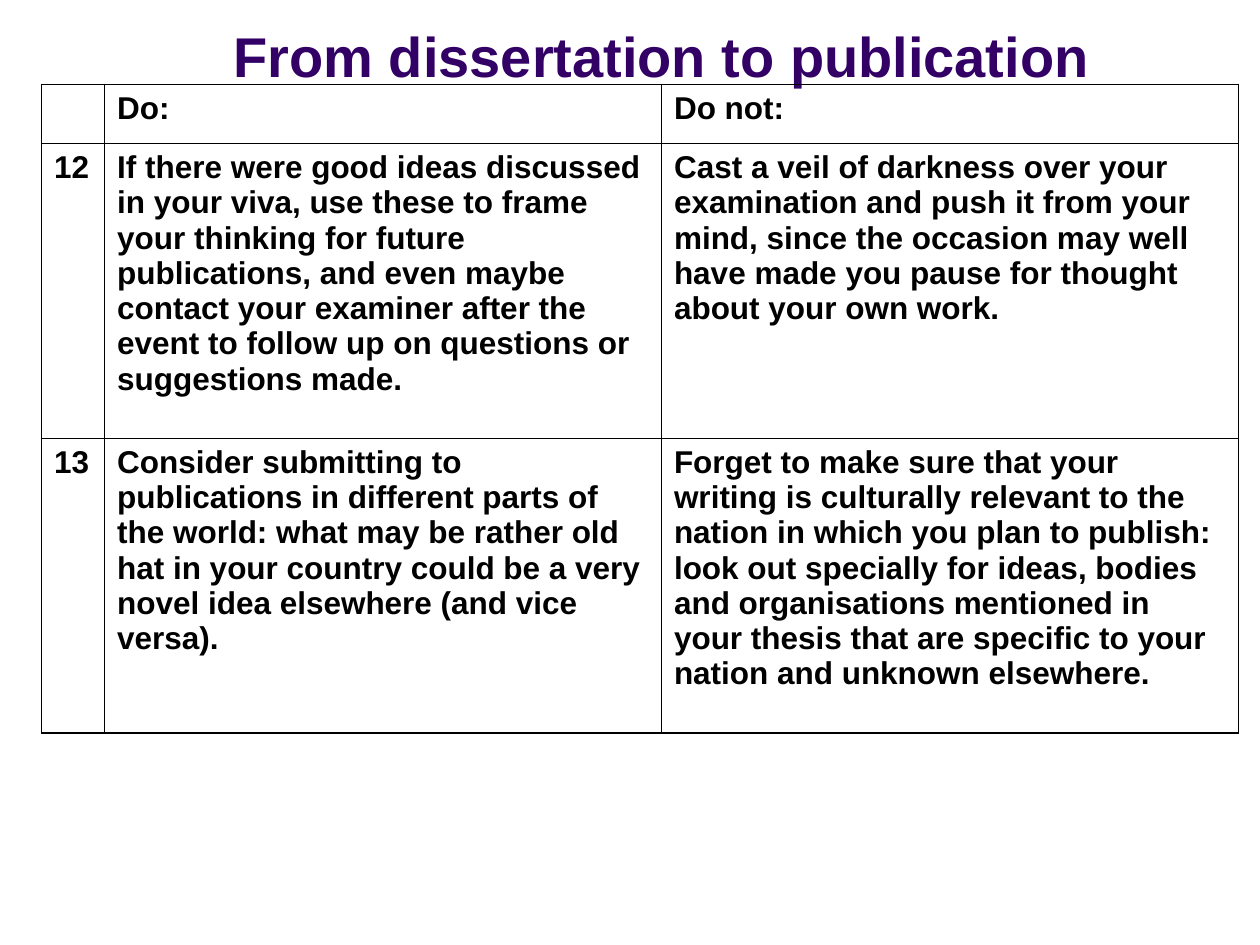
import lxml.etree
import pptx
import pptx.dml.color
import pptx.enum.text
import pptx.oxml.ns
import pptx.util

FONT = "Arial"
COLOURS = {"title": "330066", "text": "000000", "border": "000000"}
COLUMN_WIDTHS = [0.5, 4.42, 4.58]
ROW_HEIGHTS = [0.47, 2.34, 2.34]
ADVICE = [
    ["", "Do:", "Do not:"],
    [
        "12",
        "If there were good ideas discussed in your viva, use these to frame your "
        "thinking for future publications, and even maybe contact your examiner "
        "after the event to follow up on questions or suggestions made.",
        "Cast a veil of darkness over your examination and push it from your mind, "
        "since the occasion may well have made you pause for thought about your "
        "own work.",
    ],
    [
        "13",
        "Consider submitting to publications in different parts of the world: what "
        "may be rather old hat in your country could be a very novel idea elsewhere "
        "(and vice versa).",
        "Forget to make sure that your writing is culturally relevant to the nation "
        "in which you plan to publish: look out specially for ideas, bodies and "
        "organisations mentioned in your thesis that are specific to your nation "
        "and unknown elsewhere.",
    ],
]


def inches(*lengths):
    return [pptx.util.Inches(length) for length in lengths]


def write_bold(frame, text, size, colour):
    frame.text = text
    font = frame.paragraphs[0].font
    for span in frame.paragraphs[0].runs:
        font = span.font
    font.name = FONT
    font.size = pptx.util.Pt(size)
    font.bold = True
    font.color.rgb = pptx.dml.color.RGBColor.from_string(COLOURS[colour])


def add_title(page, text):
    box = page.shapes.add_textbox(*inches(0.5, 0.17, 8.25, 0.58))
    frame = box.text_frame
    frame.word_wrap = True
    frame.vertical_anchor = pptx.enum.text.MSO_ANCHOR.BOTTOM
    write_bold(frame, text, 32, "title")
    frame.paragraphs[0].alignment = pptx.enum.text.PP_ALIGN.RIGHT


def set_borders(cell, points):
    """Outline all four sides; borders must precede the fill in the cell's XML."""
    properties = cell._tc.get_or_add_tcPr()
    qualified = pptx.oxml.ns.qn
    for index, side in enumerate(("a:lnL", "a:lnR", "a:lnT", "a:lnB")):
        line = lxml.etree.Element(qualified(side), w=str(pptx.util.Pt(points)))
        fill = lxml.etree.SubElement(line, qualified("a:solidFill"))
        lxml.etree.SubElement(fill, qualified("a:srgbClr"), val=COLOURS["border"])
        properties.insert(index, line)


def add_advice_table(page, rows):
    frame = page.shapes.add_table(
        len(rows), len(COLUMN_WIDTHS),
        *inches(0.33, 0.67, sum(COLUMN_WIDTHS), sum(ROW_HEIGHTS)))
    table = frame.table
    table.first_row = False
    table.horz_banding = False
    for column, width in zip(table.columns, inches(*COLUMN_WIDTHS)):
        column.width = width
    for row, height, texts in zip(table.rows, inches(*ROW_HEIGHTS), rows):
        row.height = height
        for cell, text in zip(row.cells, texts):
            cell.fill.background()
            set_borders(cell, 1)
            write_bold(cell.text_frame, text, 18, "text")


def main():
    deck = pptx.Presentation()
    deck.slide_width, deck.slide_height = inches(10, 7.5)
    page = deck.slides.add_slide(deck.slide_layouts[6])
    add_title(page, "From dissertation to publication")
    add_advice_table(page, ADVICE)
    deck.save("out.pptx")


if __name__ == "__main__":
    main()
